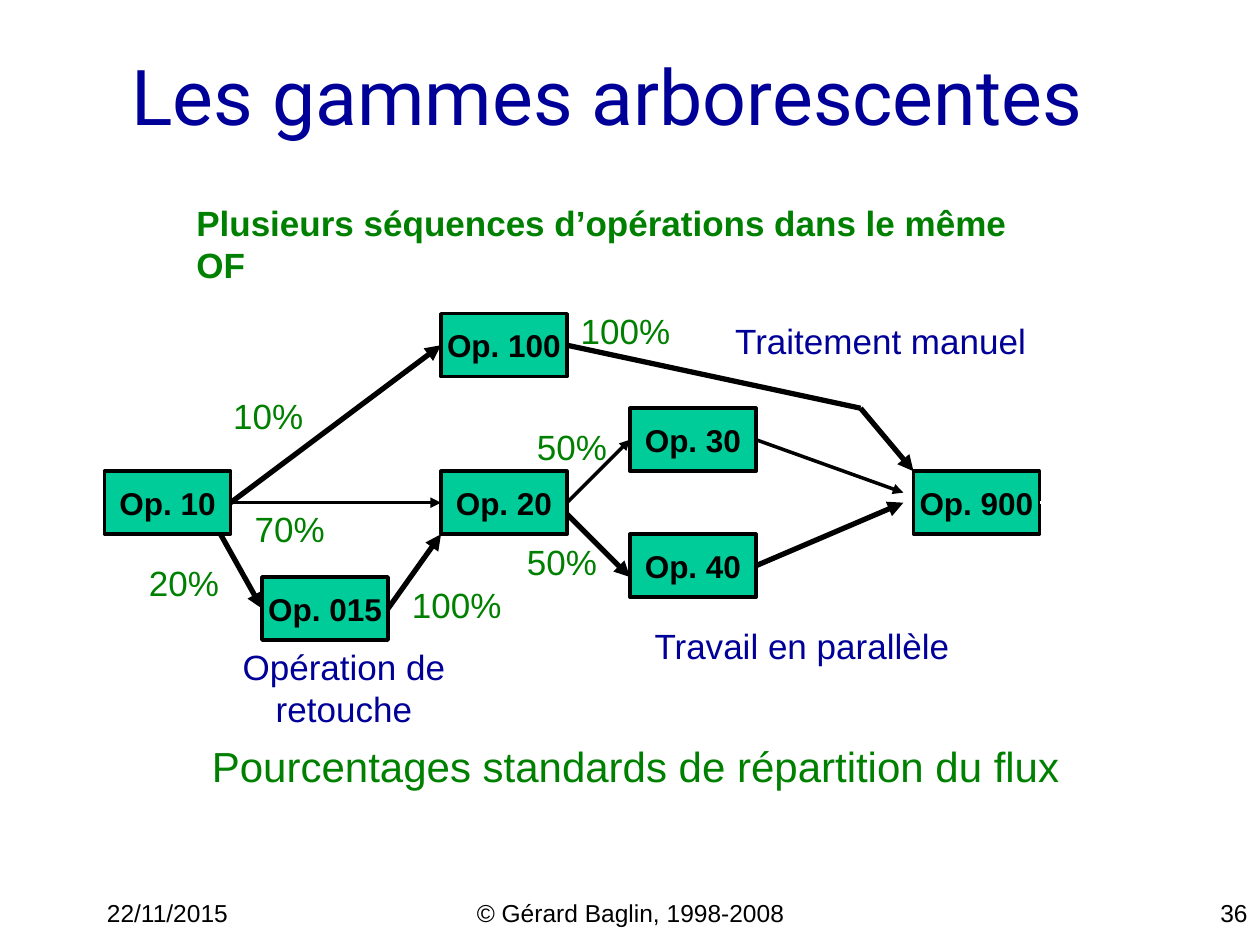
from lxml import etree
from pptx import Presentation
from pptx.dml.color import RGBColor
from pptx.enum.shapes import MSO_CONNECTOR, MSO_SHAPE
from pptx.enum.text import MSO_ANCHOR, MSO_AUTO_SIZE, PP_ALIGN
from pptx.oxml.ns import qn
from pptx.util import Inches, Pt

LEFT, CENTER, RIGHT = PP_ALIGN.LEFT, PP_ALIGN.CENTER, PP_ALIGN.RIGHT
TOP, MIDDLE = MSO_ANCHOR.TOP, MSO_ANCHOR.MIDDLE
BLACK, WHITE, BLUE, GREEN, TEAL = "000000", "FFFFFF", "000099", "008000", "00CC99"

TITLE = "Les gammes arborescentes"
HEADING = "Plusieurs séquences d’opérations dans le même OF"

BOX_W, BOX_H = 1, 0.5
OPERATIONS = {  # number: left, top
    "10": (0.83, 3.74),
    "20": (3.5, 3.74),
    "30": (5, 3.24),
    "40": (5, 4.24),
    "900": (7.25, 3.74),
    "015": (2.08, 4.58),
    "100": (3.5, 2.49),
}

LABEL_H = 0.43
PERCENTAGES = [  # text, left, top, width
    ("20%", 1.08, 4.41, 0.76),
    ("10%", 1.75, 3.08, 0.76),
    ("70%", 1.92, 3.98, 0.76),
    ("50%", 4.08, 4.24, 0.76),
    ("50%", 4.16, 3.33, 0.76),
    ("100%", 4.51, 2.41, 0.91),
    ("100%", 3.17, 4.58, 0.91),
]
COMMENTS = [  # text, left, top, width, wraps
    ("Opération de retouche", 1.28, 5.24, 2.9, True),
    ("Traitement manuel", 5.73, 2.49, 2.52, False),
    ("Travail en parallèle", 5.09, 4.91, 2.55, False),
]
FOOTERS = [  # text, left, width, alignment
    ("22/11/2015", 0.75, 2.08, LEFT),
    ("© Gérard Baglin, 1998-2008", 3.42, 3.17, CENTER),
    ("36", 7.92, 2.08, RIGHT),
]


def inlet(operation):
    """Middle of the left edge of an operation box."""
    left, top = OPERATIONS[operation]
    return left, top + BOX_H / 2


def outlet(operation):
    """Middle of the right edge of an operation box."""
    left, top = OPERATIONS[operation]
    return left + BOX_W, top + BOX_H / 2


BEND = (6.83, 3.24)
FLOWS = [  # start, end, width, colour, arrowhead
    (outlet("10"), inlet("20"), 2, BLACK, True),
    (outlet("20"), inlet("30"), 2, BLACK, True),
    (outlet("30"), (7.17, 3.91), 2, BLACK, True),
    (outlet("900"), (8.58, 3.99), 2, WHITE, True),
    ((1.75, 4.24), inlet("015"), 3, BLACK, True),
    (outlet("015"), (3.5, 4.24), 3, BLACK, True),
    (outlet("10"), inlet("100"), 3, BLACK, True),
    (outlet("100"), BEND, 3, BLACK, False),
    (BEND, OPERATIONS["900"], 3, BLACK, True),
    ((4.5, 4.08), (5, 4.58), 3, BLACK, True),
    (outlet("40"), (7.17, 3.99), 3, BLACK, True),
]


def rgb(colour):
    return RGBColor.from_string(colour)


def write(shape, text, size, colour, align=CENTER, anchor=MIDDLE,
          wrap=False, bold=False, font="Arial"):
    frame = shape.text_frame
    frame.text = text
    frame.auto_size = MSO_AUTO_SIZE.NONE
    frame.word_wrap = wrap
    frame.vertical_anchor = anchor
    paragraph = frame.paragraphs[0]
    paragraph.alignment = align
    paragraph.font.name = font
    paragraph.font.size = Pt(size)
    paragraph.font.bold = bold
    paragraph.font.color.rgb = rgb(colour)


def add_label(slide, at, text, size, colour, **style):
    box = slide.shapes.add_textbox(*map(Inches, at))
    write(box, text, size, colour, **style)


def add_operation(slide, number, left, top):
    box = slide.shapes.add_shape(
        MSO_SHAPE.RECTANGLE, *map(Inches, (left, top, BOX_W, BOX_H)))
    box.shadow.inherit = False
    box.fill.solid()
    box.fill.fore_color.rgb = rgb(TEAL)
    box.line.color.rgb = rgb(BLACK)
    box.line.width = Pt(2)
    write(box, f"Op. {number}", 18, BLACK, bold=True)


def add_flow(slide, start, end, width, colour, arrowhead):
    flow = slide.shapes.add_connector(
        MSO_CONNECTOR.STRAIGHT, *map(Inches, (*start, *end)))
    flow.line.color.rgb = rgb(colour)
    flow.line.width = Pt(width)
    if arrowhead:
        etree.SubElement(flow.line._get_or_add_ln(), qn("a:tailEnd"), type="triangle")
    etree.SubElement(flow._element.spPr, qn("a:effectLst"))


def main():
    prs = Presentation()
    prs.slide_width, prs.slide_height = Inches(10), Inches(7.5)
    slide = prs.slides.add_slide(prs.slide_layouts[5])

    title = slide.shapes.title
    title.left, title.top = Inches(0.2), Inches(0.13)
    title.width, title.height = Inches(8.5), Inches(1.25)
    write(title, TITLE, 44, BLUE, align=RIGHT, wrap=True, font="Roboto")

    add_label(slide, (1.46, 1.55, 7, LABEL_H), HEADING, 20, GREEN,
              align=LEFT, anchor=TOP, wrap=True, bold=True)
    for number, (left, top) in OPERATIONS.items():
        add_operation(slide, number, left, top)
    for flow in FLOWS:
        add_flow(slide, *flow)
    for text, left, top, width in PERCENTAGES:
        add_label(slide, (left, top, width, LABEL_H), text, 20, GREEN)
    for text, left, top, width, wrap in COMMENTS:
        add_label(slide, (left, top, width, LABEL_H), text, 20, BLUE, wrap=wrap)
    add_label(slide, (1.58, 5.83, 6.93, 0.5),
              "Pourcentages standards de répartition du flux", 24, GREEN)
    for text, left, width, align in FOOTERS:
        add_label(slide, (left, 7.08, width, 0.25), text, 14, BLACK,
                  align=align, anchor=TOP, wrap=True)

    prs.save("out.pptx")


if __name__ == "__main__":
    main()
